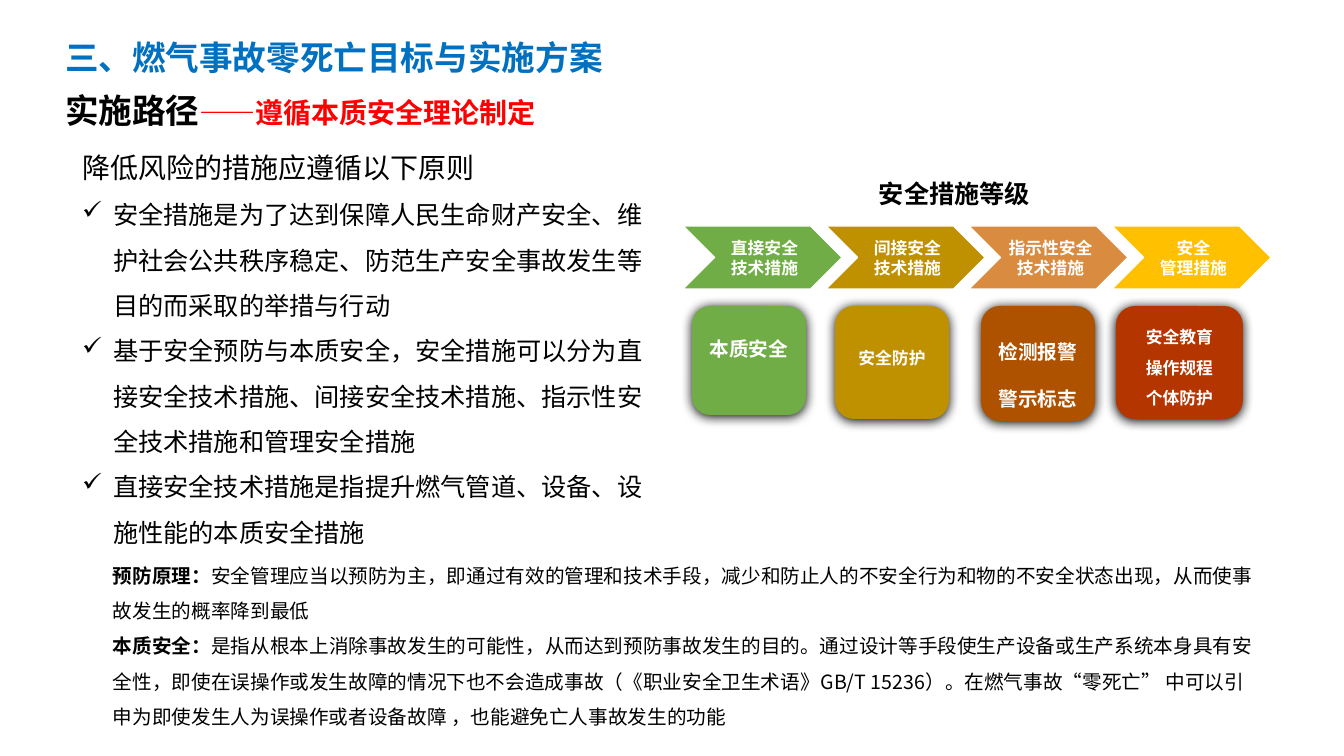
from lxml.etree import SubElement
from pptx import Presentation
from pptx.dml.color import RGBColor
from pptx.enum.shapes import MSO_SHAPE
from pptx.enum.text import MSO_ANCHOR, PP_ALIGN
from pptx.oxml import parse_xml
from pptx.oxml.ns import nsdecls, qn
from pptx.util import Emu, Pt

FONT = "Noto Sans CJK SC"
COLORS = {
    "black": "000000", "white": "FFFFFF", "blue": "0070C0", "red": "FF0000",
    "green": "70AD47", "olive": "BF9000", "orange": "D98C3F", "gold": "FFC000",
    "brown": "AF5200", "rust": "B43500",
}


def px(count):
    """Turn pixels into EMU."""
    return Emu(round(count * 914400 / 100.8))


def rgb(name):
    """Look up a colour by name."""
    return RGBColor.from_string(COLORS[name])


def frame(shape, pads=(10, 5, 10, 5), anchor=MSO_ANCHOR.TOP):
    """Set wrapping, insets and anchor, and return the text frame."""
    text = shape.text_frame
    text.word_wrap = True
    text.vertical_anchor = anchor
    text.margin_left, text.margin_top, text.margin_right, text.margin_bottom = map(px, pads)
    return text


def fill_text(text, paras, align=PP_ALIGN.LEFT, gap=1.0):
    """Write paragraphs, each a list of (words, size, colour, bold) runs."""
    for index, runs in enumerate(paras):
        para = text.paragraphs[0] if index == 0 else text.add_paragraph()
        para.alignment = align
        para.line_spacing = gap
        for words, size, color, bold in runs:
            run = para.add_run()
            run.text = words
            font = run.font
            font.name, font.size, font.bold = FONT, Pt(size), bold
            font.color.rgb = rgb(color)
            SubElement(run._r.get_or_add_rPr(), qn("a:ea"), typeface=FONT)


def add_text(slide, box, paras, pads=(10, 5, 10, 5), gap=1.0):
    """Add a text box with its paragraphs."""
    shape = slide.shapes.add_textbox(*map(px, box))
    fill_text(frame(shape, pads), paras, gap=gap)
    return shape


def add_block(slide, kind, box, color):
    """Add a filled shape without a line."""
    shape = slide.shapes.add_shape(kind, *map(px, box))
    shape.shadow.inherit = False
    shape.fill.solid()
    shape.fill.fore_color.rgb = rgb(color)
    shape.line.fill.background()
    return shape


def add_head(slide, left, top):
    """Place the title and the subtitle."""
    add_text(slide, (left, top, 1017, 50),
             [[("三、燃气事故零死亡目标与实施方案", 24, "blue", True)]])
    add_text(slide, (left, top + 53, 672, 50),
             [[("实施路径", 24, "black", True), ("——遵循本质安全理论制定", 20, "red", True)]])


def add_rules(slide, box):
    """Place the lead line and the ticked principles."""
    points = [
        "安全措施是为了达到保障人民生命财产安全、维护社会公共秩序稳定、防范生产安全事故发生等目的而采取的举措与行动",
        "基于安全预防与本质安全，安全措施可以分为直接安全技术措施、间接安全技术措施、指示性安全技术措施和管理安全措施",
        "直接安全技术措施是指提升燃气管道、设备、设施性能的本质安全措施",
    ]
    paras = [[("降低风险的措施应遵循以下原则", 20, "black", False)]]
    paras += [[(point, 18, "black", False)] for point in points]
    shape = add_text(slide, box, paras, (13, 7, 13, 7), 1.5)
    for para in shape.text_frame.paragraphs[1:]:
        props = para._p.get_or_add_pPr()
        props.set("marL", str(px(31)))
        props.set("indent", str(-px(31)))
        SubElement(props, qn("a:buChar"), char="✓")


def add_steps(slide, left, top):
    """Place the row of chevrons with their labels."""
    steps = [
        ("green", ["直接安全", "技术措施"]),
        ("olive", ["间接安全", "技术措施"]),
        ("orange", ["指示性安全技术措施"]),
        ("gold", ["安全", "管理措施"]),
    ]
    for index, (color, lines) in enumerate(steps):
        x = left + 143 * index
        arrow = add_block(slide, MSO_SHAPE.CHEVRON, (x, top, 159, 63), color)
        arrow.line.color.rgb = rgb("white")
        arrow.line.width = Pt(1)
        label = slide.shapes.add_textbox(*map(px, (x + 32, top, 96, 63)))
        fill_text(frame(label, (5, 2, 2, 2), MSO_ANCHOR.MIDDLE),
                  [[(line, 12, "white", True)] for line in lines], PP_ALIGN.CENTER)


def add_cards(slide, left, top):
    """Place the row of shadowed cards."""
    cards = [
        (0, 114, 109, "green", 14, 1.0, 29, ["本质安全"]),
        (143, 114, 113, "olive", 12, 1.0, 14, ["安全防护"]),
        (289, 114, 115, "brown", 14, 2.0, 5, ["检测报警", "警示标志"]),
        (424, 127, 113, "rust", 12, 1.5, 5, ["安全教育", "操作规程", "个体防护"]),
    ]
    for shift, width, height, color, size, gap, foot, lines in cards:
        card = add_block(slide, MSO_SHAPE.ROUNDED_RECTANGLE,
                         (left + shift, top, width, height), color)
        props = card._element.spPr
        props.remove(props.find(qn("a:effectLst")))
        props.append(parse_xml(
            f'<a:effectLst {nsdecls("a")}><a:outerShdw blurRad="{Pt(8.5)}" dist="{Pt(1)}" '
            f'dir="5400000" algn="t" rotWithShape="0"><a:srgbClr val="{COLORS["black"]}"/>'
            '</a:outerShdw></a:effectLst>'))
        fill_text(frame(card, (10, 5, 10, foot), MSO_ANCHOR.MIDDLE),
                  [[(line, size, "white", True)] for line in lines], PP_ALIGN.CENTER, gap)


def add_levels(slide, left, top):
    """Place the diagram of safety levels."""
    add_text(slide, (left + 186, top, 218, 40), [[("安全措施等级", 18, "black", True)]])
    add_steps(slide, left, top + 53)
    add_cards(slide, left + 9, top + 133)


def add_terms(slide, box):
    """Place the definitions at the foot."""
    terms = [
        ("预防原理：", "安全管理应当以预防为主，即通过有效的管理和技术手段，减少和防止人的不安全行为和物的不安全状态出现，从而使事故发生的概率降到最低"),
        ("本质安全：", "是指从根本上消除事故发生的可能性，从而达到预防事故发生的目的。通过设计等手段使生产设备或生产系统本身具有安全性，即使在误操作或发生故障的情况下也不会造成事故（《职业安全卫生术语》GB/T 15236）。在燃气事故“零死亡” 中可以引申为即使发生人为误操作或者设备故障 ，也能避免亡人事故发生的功能"),
    ]
    add_text(slide, box, [[(term, 14, "black", True), (body, 14, "black", False)]
                          for term, body in terms], gap=1.5)


def main():
    """Build the slide and save it."""
    deck = Presentation()
    deck.slide_width, deck.slide_height = px(1344), px(756)
    slide = deck.slides.add_slide(deck.slide_layouts[6])
    add_head(slide, 55, 32)
    add_rules(slide, (69, 127, 607, 472))
    add_levels(slide, 683, 173)
    add_terms(slide, (103, 547, 1168, 208))
    deck.save("out.pptx")


if __name__ == "__main__":
    main()
